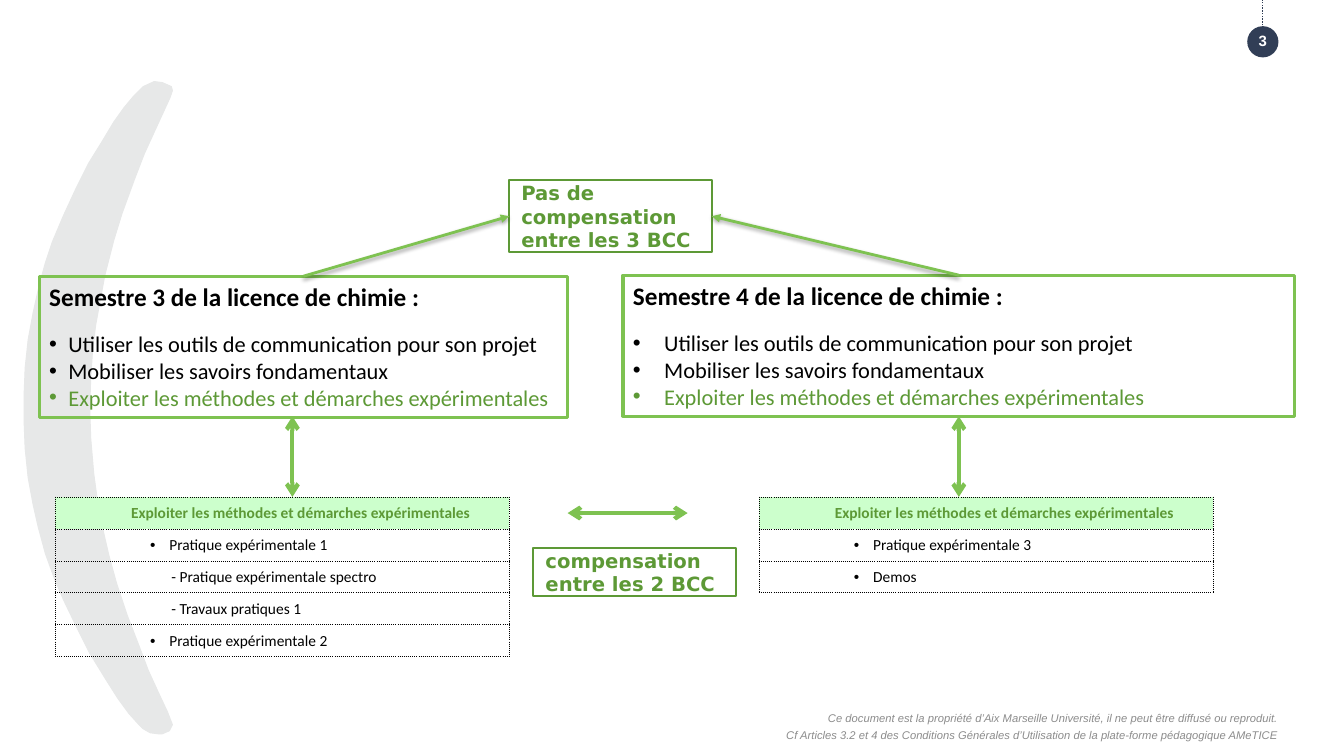
from lxml.etree import SubElement
from pptx import Presentation
from pptx.dml.color import RGBColor
from pptx.enum.dml import MSO_LINE
from pptx.enum.shapes import MSO_CONNECTOR, MSO_SHAPE
from pptx.enum.text import MSO_ANCHOR, PP_ALIGN
from pptx.oxml import parse_xml
from pptx.oxml.ns import nsdecls, qn
from pptx.util import Emu, Inches, Pt

GREEN, DARK_GREEN, PALE_GREEN = "7EC251", "5D9936", "CCFFCC"
NAVY, BLACK, WHITE = "313E56", "000000", "FFFFFF"
TOP, LEFT, BOTTOM, RIGHT = range(4)
SKILLS = [
    "Utiliser les outils de communication pour son projet",
    "Mobiliser les savoirs fondamentaux",
    "Exploiter les méthodes et démarches expérimentales",
]
NOTICE = [
    "Ce document est la propriété d’Aix Marseille Université, il ne peut être diffusé ou reproduit.",
    "Cf Articles 3.2 et 4 des Conditions Générales d’Utilisation de la plate-forme pédagogique AMeTICE",
]
CRESCENT = [
    (1.71, 0.9), (1.7, 0.86), (1.61, 0.82), (1.53, 0.81), (1.42, 0.86), (1.33, 0.95),
    (1.23, 1.07), (1.13, 1.21), (1.01, 1.41), (0.88, 1.62), (0.75, 1.88), (0.63, 2.14),
    (0.52, 2.4), (0.45, 2.61), (0.39, 2.83), (0.33, 3.1), (0.28, 3.37), (0.25, 3.65),
    (0.24, 3.9), (0.24, 4.2), (0.25, 4.45), (0.28, 4.74), (0.33, 5.01), (0.38, 5.23),
    (0.45, 5.49), (0.54, 5.74), (0.63, 5.95), (0.75, 6.2), (0.89, 6.48), (1.05, 6.74),
    (1.17, 6.93), (1.28, 7.08), (1.37, 7.18), (1.42, 7.23), (1.49, 7.27), (1.57, 7.28),
    (1.61, 7.28), (1.68, 7.25), (1.71, 7.19), (1.66, 7.06), (1.58, 6.89), (1.47, 6.65),
    (1.38, 6.41), (1.26, 6.1), (1.16, 5.8), (1.08, 5.51), (1.02, 5.25), (0.96, 4.92),
    (0.93, 4.7), (0.9, 4.35), (0.89, 4.05), (0.9, 3.75), (0.92, 3.45), (0.95, 3.22),
    (0.99, 3), (1.04, 2.73), (1.13, 2.38), (1.21, 2.12), (1.33, 1.79), (1.43, 1.53),
    (1.53, 1.31), (1.64, 1.07), (1.69, 0.96),
]


def color(value):
    return RGBColor.from_string(value)


def format_text(paragraph, size, value, font="Calibri", bold=False, italic=False):
    for run in paragraph.runs:
        run.font.name = font
        run.font.size = Pt(size)
        run.font.bold = bold
        run.font.italic = italic
        run.font.color.rgb = color(value)


def set_insets(frame, left, top, right, bottom):
    frame.margin_left, frame.margin_top = Inches(left), Inches(top)
    frame.margin_right, frame.margin_bottom = Inches(right), Inches(bottom)


def add_bullet(paragraph, indent):
    properties = paragraph._p.get_or_add_pPr()
    properties.set("marL", str(Inches(indent)))
    properties.set("indent", str(-Inches(indent)))
    SubElement(properties, qn("a:buFont")).set("typeface", "Arial")
    SubElement(properties, qn("a:buChar")).set("char", "•")


def add_crescent(slide):
    points = [(Inches(x), Inches(y)) for x, y in CRESCENT]
    builder = slide.shapes.build_freeform(*points[0])
    builder.add_line_segments(points[1:], close=True)
    shape = builder.convert_to_shape()
    shape.shadow.inherit = False
    shape.fill.solid()
    shape.fill.fore_color.rgb = color("E7E8E8")
    shape.line.color.rgb = color("E7E8E8")
    shape.line.width = Pt(0.75)


def add_box(slide, x, y, width, height, line, line_width):
    box = slide.shapes.add_shape(
        MSO_SHAPE.RECTANGLE, Inches(x), Inches(y), Inches(width), Inches(height))
    box.shadow.inherit = False
    box.fill.background()
    box.line.color.rgb = color(line)
    box.line.width = Pt(line_width)
    box.text_frame.word_wrap = True
    return box


def add_semester(slide, x, y, width, title, indent):
    box = add_box(slide, x, y, width, 1.4, GREEN, 2.25)
    frame = box.text_frame
    frame.vertical_anchor = MSO_ANCHOR.TOP
    frame.text = "\n".join([title] + SKILLS)
    heading, *skills = frame.paragraphs
    heading.alignment = PP_ALIGN.LEFT
    format_text(heading, 18, BLACK, bold=True)
    for skill in skills:
        skill.alignment = PP_ALIGN.LEFT
        add_bullet(skill, indent)
        format_text(skill, 16, DARK_GREEN if skill.text == SKILLS[-1] else BLACK)
    skills[0].space_before = Pt(13.4)
    return box


def add_rule_box(slide, x, y, height, text):
    box = add_box(slide, x, y, 2.01, height, DARK_GREEN, 1.5)
    frame = box.text_frame
    set_insets(frame, 0.12, 0, 0, 0)
    frame.vertical_anchor = MSO_ANCHOR.MIDDLE
    frame.text = text
    frame.paragraphs[0].alignment = PP_ALIGN.LEFT
    format_text(frame.paragraphs[0], 14, DARK_GREEN, "DejaVu Sans", bold=True)
    return box


def add_line(slide, start, end, value, width):
    line = slide.shapes.add_connector(
        MSO_CONNECTOR.STRAIGHT, *(Inches(number) for number in start + end))
    line.line.color.rgb = color(value)
    line.line.width = Pt(width)
    SubElement(line._element.spPr, qn("a:effectLst"))
    return line


def add_double_arrow(slide, start, end):
    arrow = add_line(slide, start, end, GREEN, 3)
    outline = arrow.line._get_or_add_ln()
    for name in ("a:headEnd", "a:tailEnd"):
        SubElement(outline, qn(name)).set("type", "arrow")
    return arrow


def add_shadowed_arrow(slide, semester, rule_box, side):
    arrow = add_line(slide, (0, 0), (1, 1), GREEN, 2)
    arrow.begin_connect(semester, TOP)
    arrow.end_connect(rule_box, side)
    SubElement(arrow.line._get_or_add_ln(), qn("a:tailEnd")).set("type", "triangle")
    arrow._element.spPr.find(qn("a:effectLst")).append(parse_xml(
        f'<a:outerShdw {nsdecls("a")} blurRad="{Pt(3.1)}" dist="{Pt(1.6)}" dir="5400000" '
        'rotWithShape="0"><a:srgbClr val="000000"><a:alpha val="38000"/></a:srgbClr></a:outerShdw>'))


def add_cell_borders(cell):
    properties = cell._tc.get_or_add_tcPr()
    for index, side in enumerate("LRTB"):
        properties.insert(index, parse_xml(
            f'<a:ln{side} {nsdecls("a")} w="{Pt(0.5)}"><a:solidFill><a:srgbClr val="{BLACK}"/>'
            f'</a:solidFill><a:prstDash val="dot"/></a:ln{side}>'))


def add_course_table(slide, x, courses):
    y, row_height = 4.93, 0.317
    rows = [SKILLS[-1]] + courses
    table = slide.shapes.add_table(
        len(rows), 1, Inches(x), Inches(y), Inches(4.5), Inches(row_height * len(rows))).table
    table.first_row = table.horz_banding = False
    for index, text in enumerate(rows):
        cell = table.cell(index, 0)
        cell.text = text
        cell.vertical_anchor = MSO_ANCHOR.MIDDLE
        paragraph = cell.text_frame.paragraphs[0]
        header = index == 0
        margin = 0.75 if header else 1.15 if text.startswith("-") else 0.94
        set_insets(cell, margin, 0.01, 0.01, 0)
        if header:
            cell.fill.solid()
            cell.fill.fore_color.rgb = color(PALE_GREEN)
        else:
            cell.fill.background()
            if not text.startswith("-"):
                add_bullet(paragraph, 0.19)
        format_text(paragraph, 11, DARK_GREEN if header else BLACK, bold=header)
        add_cell_borders(cell)


def add_page_number(slide, number):
    line = add_line(slide, (12.52, 0.28), (12.52, 0), NAVY, 1)
    line.line.dash_style = MSO_LINE.ROUND_DOT
    badge = slide.shapes.add_shape(
        MSO_SHAPE.OVAL, Inches(12.37), Inches(0.26), Inches(0.31), Inches(0.31))
    badge.shadow.inherit = False
    badge.fill.solid()
    badge.fill.fore_color.rgb = color(NAVY)
    badge.line.fill.background()
    frame = badge.text_frame
    set_insets(frame, 0, 0, 0, 0.02)
    frame.vertical_anchor = MSO_ANCHOR.MIDDLE
    frame.text = number
    frame.paragraphs[0].alignment = PP_ALIGN.CENTER
    format_text(frame.paragraphs[0], 10.7, WHITE, "Arial", bold=True)


def add_notice(slide):
    frame = slide.shapes.add_textbox(
        Inches(4.19), Inches(7.06), Inches(8.49), Inches(0.36)).text_frame
    frame.word_wrap = True
    set_insets(frame, 0, 0, 0, 0)
    frame.text = "\n".join(NOTICE)
    for paragraph in frame.paragraphs:
        paragraph.alignment = PP_ALIGN.RIGHT
        format_text(paragraph, 8, "8C8C8C", "Arial", italic=True)
    frame.paragraphs[1].space_before = Pt(2)


def main():
    presentation = Presentation()
    presentation.slide_width, presentation.slide_height = Inches(13.33), Inches(7.5)
    slide = presentation.slides.add_slide(presentation.slide_layouts[6])
    add_crescent(slide)
    add_page_number(slide, "3")
    add_notice(slide)
    add_course_table(slide, 0.55, [
        "Pratique expérimentale 1", "- Pratique expérimentale spectro",
        "- Travaux pratiques 1", "Pratique expérimentale 2"])
    add_course_table(slide, 7.53, ["Pratique expérimentale 3", "Demos"])
    third = add_semester(slide, 0.39, 2.74, 5.24, "Semestre 3 de la licence de chimie :", 0.19)
    fourth = add_semester(slide, 6.18, 2.73, 6.66, "Semestre 4 de la licence de chimie :", 0.31)
    add_double_arrow(slide, (2.9, 4.13), (2.9, 4.93))
    add_double_arrow(slide, (9.51, 4.13), (9.51, 4.93)).begin_connect(fourth, BOTTOM)
    no_compensation = add_rule_box(slide, 5.05, 1.79, 0.71, "Pas de compensation entre les 3 BCC")
    add_shadowed_arrow(slide, third, no_compensation, LEFT)
    add_shadowed_arrow(slide, fourth, no_compensation, RIGHT)
    add_double_arrow(slide, (5.63, 5.09), (6.82, 5.09))
    add_rule_box(slide, 5.29, 5.44, 0.47, "compensation entre les 2 BCC")
    presentation.save("out.pptx")


if __name__ == "__main__":
    main()
